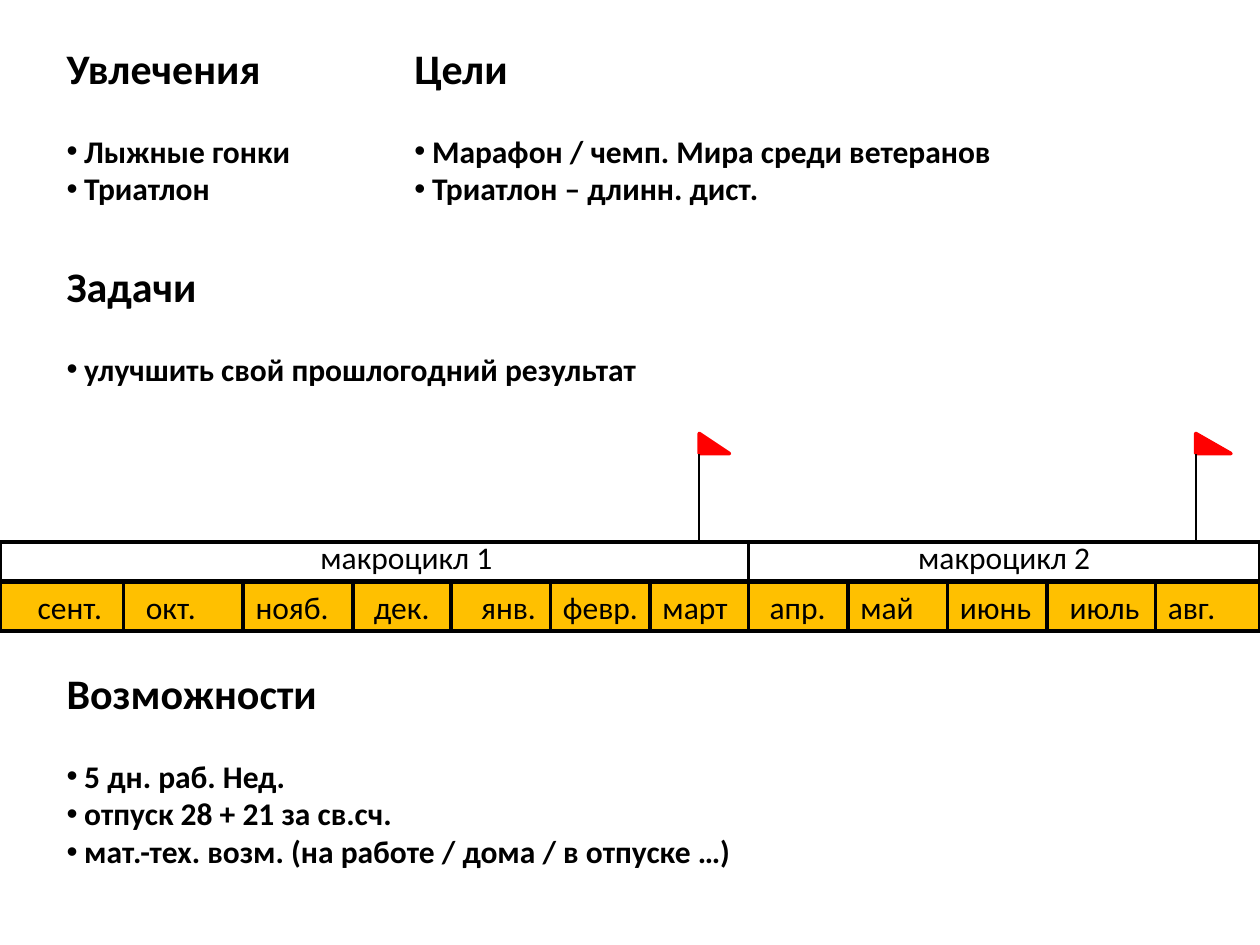
from pptx import Presentation
from pptx.dml.color import RGBColor
from pptx.enum import shapes, text
from pptx.oxml import xmlchemy
from pptx.util import Inches, Pt

SECTIONS = [
    ("Увлечения", (0.43, 0.29, 2.44, 2.02), ["Лыжные гонки", "Триатлон"]),
    ("Цели", (3.19, 0.29, 5.59, 1.41),
     ["Марафон / чемп. Мира среди ветеранов", "Триатлон – длинн. дист."]),
    ("Задачи", (0.43, 2.02, 8.5, 1.41), ["улучшить свой прошлогодний результат"]),
    ("Возможности", (0.43, 5.25, 8.58, 1.72),
     ["5 дн. раб. Нед.", "отпуск 28 + 21 за св.сч.",
      "мат.-тех. возм. (на работе / дома / в отпуске …)"]),
]
MACROCYCLES = [("макроцикл 1", 0, 5.94, 0.61), ("макроцикл 2", 5.94, 4.06, 0.1)]
MONTHS = [
    ("сент.", 0, 0.2), ("окт.", 0.98, 0.08), ("нояб.", 1.93, 0),
    ("дек.", 2.8, 0.07), ("янв.", 3.58, 0.14), ("февр.", 4.37, 0),
    ("март", 5.16, 0), ("апр.", 5.94, 0.07), ("май", 6.73, 0),
    ("июнь", 7.52, 0), ("июль", 8.31, 0.08), ("авг.", 9.17, 0),
]
FLAGS = [(5.55, 0.24), (9.49, 0.28)]

SLIDE_WIDTH = 10
FLAG_TOP, FLAG_HEIGHT = 3.44, 0.16
CYCLE_TOP, CYCLE_HEIGHT = 4.3, 0.31
MONTH_TOP, MONTH_HEIGHT = 4.62, 0.39
LABEL_HEIGHT = 0.4
BLACK, RED, AMBER = "000000", "FF0000", "FFC000"


def color(value):
    return RGBColor.from_string(value)


def add_block(slide, kind, box, line, fill=None):
    shape = slide.shapes.add_shape(kind, *map(Inches, box))
    shape.shadow.inherit = False
    if fill:
        shape.fill.solid()
        shape.fill.fore_color.rgb = color(fill)
    else:
        shape.fill.background()
    shape.line.color.rgb = color(line)
    shape.line.width = Pt(2)


def add_pole(slide, x):
    pole = slide.shapes.add_connector(
        shapes.MSO_CONNECTOR.STRAIGHT,
        *map(Inches, (x, CYCLE_TOP, x, FLAG_TOP + FLAG_HEIGHT)))
    pole.line.color.rgb = color(BLACK)
    pole.line.width = Pt(1.25)
    properties = pole._element.spPr
    properties.append(xmlchemy.OxmlElement("a:effectLst"))


def add_frame(slide, box):
    frame = slide.shapes.add_textbox(*map(Inches, box)).text_frame
    frame.word_wrap = True
    return frame


def write(paragraph, words, size=18, bold=False):
    paragraph.text = words
    font = paragraph.font
    font.name, font.size, font.bold = "Calibri", Pt(size), bold
    font.color.rgb = color(BLACK)


def add_bullet(paragraph):
    properties = paragraph._p.get_or_add_pPr()
    indent = Inches(0.14)
    properties.set("marL", str(indent))
    properties.set("indent", str(-indent))
    font = xmlchemy.OxmlElement("a:buFont")
    font.set("typeface", "Arial")
    bullet = xmlchemy.OxmlElement("a:buChar")
    bullet.set("char", "•")
    properties.insert_element_before(font, "a:tabLst", "a:defRPr", "a:extLst")
    properties.insert_element_before(bullet, "a:tabLst", "a:defRPr", "a:extLst")


def add_section(slide, heading, box, items):
    frame = add_frame(slide, box)
    title = frame.paragraphs[0]
    write(title, heading, 24, True)
    title.space_after = Pt(22)
    for item in items:
        paragraph = frame.add_paragraph()
        write(paragraph, item, bold=True)
        add_bullet(paragraph)


def add_timeline(slide):
    rectangle = shapes.MSO_SHAPE.RECTANGLE
    for x, width in FLAGS:
        add_block(slide, shapes.MSO_SHAPE.RIGHT_TRIANGLE,
                  (x, FLAG_TOP, width, FLAG_HEIGHT), RED, RED)
        add_pole(slide, x)
    for name, left, width, inset in MACROCYCLES:
        add_block(slide, rectangle, (left, CYCLE_TOP, width, CYCLE_HEIGHT), BLACK)
        frame = add_frame(slide, (left, CYCLE_TOP - 0.08, width, LABEL_HEIGHT))
        frame.margin_left = Inches(inset)
        write(frame.paragraphs[0], name)
        frame.paragraphs[0].alignment = text.PP_ALIGN.CENTER
    edges = [left for _, left, _ in MONTHS[1:]] + [SLIDE_WIDTH]
    for (_, left, _), right in zip(MONTHS, edges):
        add_block(slide, rectangle,
                  (left, MONTH_TOP, right - left, MONTH_HEIGHT), BLACK, AMBER)
    for name, left, offset in MONTHS:
        frame = add_frame(slide, (left + offset, MONTH_TOP, 0.83, LABEL_HEIGHT))
        frame.margin_right = 0
        write(frame.paragraphs[0], name)


def main():
    presentation = Presentation()
    presentation.slide_width = Inches(SLIDE_WIDTH)
    presentation.slide_height = Inches(7.5)
    slide = presentation.slides.add_slide(presentation.slide_layouts[6])
    add_timeline(slide)
    for section in SECTIONS:
        add_section(slide, *section)
    presentation.save("out.pptx")


if __name__ == "__main__":
    main()
